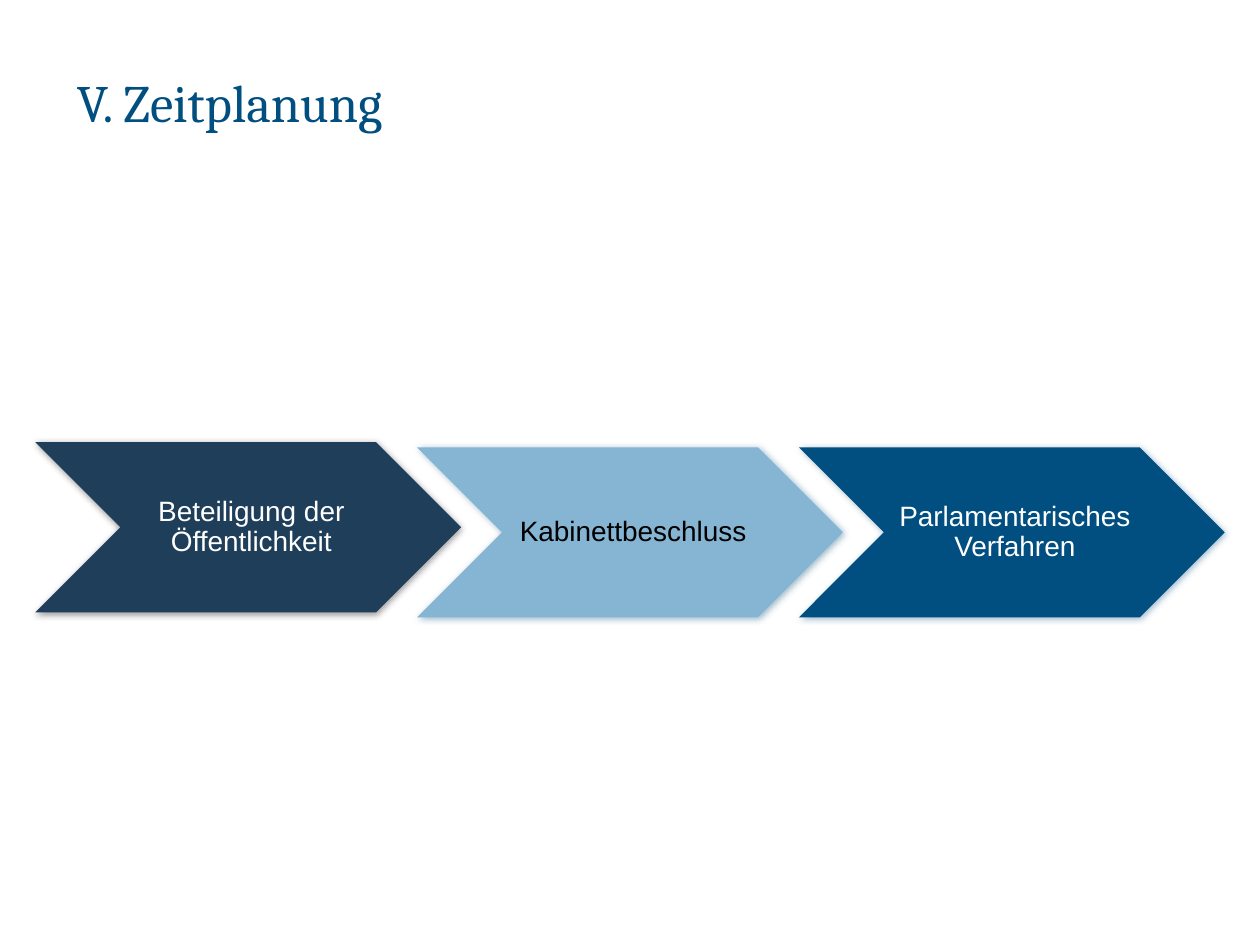
import pptx
import pptx.util
import pptx.dml.color
import pptx.enum.shapes
import pptx.enum.text
import pptx.oxml
import pptx.oxml.ns

WIDTH, HEIGHT = 10, 7.5
STEP_WIDTH, STEP_HEIGHT = 3.38, 1.35
FIRST_LEFT, STEP_PITCH = 0.28, 3.03
LABEL_OFFSET = STEP_HEIGHT / 2
STEPS = [
    ("Beteiligung der Öffentlichkeit", 3.51, "1E3E5A", "FFFFFF", "000000", 90),
    ("Kabinettbeschluss", 3.55, "85B5D3", "000000", "004F80", 45),
    ("Parlamentarisches Verfahren", 3.55, "004F80", "FFFFFF", "004F80", 45),
]


def color(value):
    return pptx.dml.color.RGBColor.from_string(value)


def inches(*lengths):
    return [pptx.util.Inches(length) for length in lengths]


def format_text(para, font, size, text_color):
    for span in para.runs:
        span.font.name = font
        span.font.size = pptx.util.Pt(size)
        span.font.color.rgb = color(text_color)


def add_title(page, text):
    title = page.shapes.title
    title.left, title.top, title.width, title.height = inches(0.51, 0.52, 8.5, 1.07)
    frame = title.text_frame
    frame.text = text
    frame.vertical_anchor = pptx.enum.text.MSO_ANCHOR.TOP
    para = frame.paragraphs[0]
    para.alignment = pptx.enum.text.PP_ALIGN.LEFT
    para.line_spacing = pptx.util.Pt(35)
    format_text(para, "Cambria", 30, "004F80")


def add_shadow(shape, shadow_color, angle):
    shape.shadow.inherit = False
    effects = shape._element.spPr.find(pptx.oxml.ns.qn("a:effectLst"))
    effects.append(pptx.oxml.parse_xml(
        f'<a:outerShdw {pptx.oxml.ns.nsdecls("a")} blurRad="{pptx.util.Pt(4)}" '
        f'dist="{pptx.util.Pt(1)}" dir="{angle * 60000}" rotWithShape="0">'
        f'<a:srgbClr val="{shadow_color}"><a:alpha val="40000"/></a:srgbClr>'
        '</a:outerShdw>'))


def add_chevron(group, left, top, fill, shadow_color, angle):
    chevron = group.shapes.add_shape(
        pptx.enum.shapes.MSO_SHAPE.CHEVRON,
        *inches(left, top, STEP_WIDTH, STEP_HEIGHT))
    chevron.fill.solid()
    chevron.fill.fore_color.rgb = color(fill)
    chevron.line.fill.background()
    add_shadow(chevron, shadow_color, angle)


def add_label(group, left, top, text, text_color):
    box = group.shapes.add_textbox(
        *inches(left + LABEL_OFFSET, top, STEP_WIDTH - 2 * LABEL_OFFSET, STEP_HEIGHT))
    frame = box.text_frame
    frame.word_wrap = True
    frame.vertical_anchor = pptx.enum.text.MSO_ANCHOR.MIDDLE
    frame.margin_left, frame.margin_top, frame.margin_right, frame.margin_bottom = inches(
        0.07, 0.02, 0.02, 0.02)
    frame.text = text
    para = frame.paragraphs[0]
    para.alignment = pptx.enum.text.PP_ALIGN.CENTER
    para.line_spacing = 0.9
    format_text(para, "Arial", 16, text_color)


def main():
    deck = pptx.Presentation()
    deck.slide_width, deck.slide_height = inches(WIDTH, HEIGHT)
    page = deck.slides.add_slide(deck.slide_layouts[0])
    subtitle = page.placeholders[1]._element
    subtitle.getparent().remove(subtitle)
    group = page.shapes.add_group_shape()
    for column, (text, top, fill, text_color, shadow_color, angle) in enumerate(STEPS):
        left = FIRST_LEFT + column * STEP_PITCH
        add_chevron(group, left, top, fill, shadow_color, angle)
        add_label(group, left, top, text, text_color)
    add_title(page, "V. Zeitplanung")
    deck.save("out.pptx")


if __name__ == "__main__":
    main()
